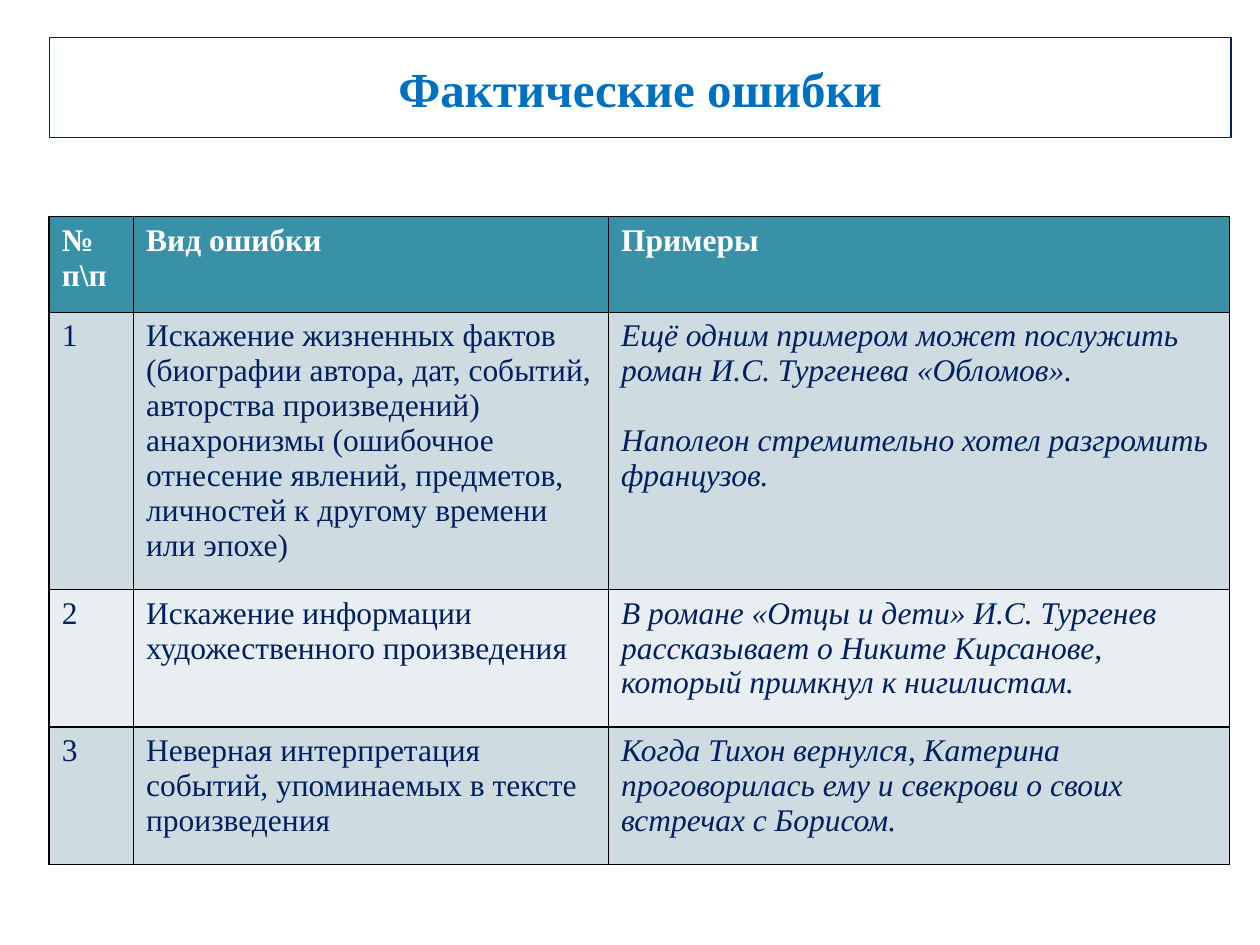
from dataclasses import dataclass
from lxml.etree import SubElement
from pptx import Presentation
from pptx.dml.color import RGBColor as RGB
from pptx.enum.text import MSO_ANCHOR as Anchor, PP_ALIGN as Align
from pptx.oxml.ns import qn
from pptx.util import Inches, Pt

TITLE = "Фактические ошибки"
HEAD = [["№", "п\\п"], ["Вид ошибки"], ["Примеры"]]
ROWS = [
    [["1"],
     ["Искажение жизненных фактов (биографии автора, дат, событий, авторства "
      "произведений) анахронизмы (ошибочное отнесение явлений, предметов, "
      "личностей к другому времени или эпохе)"],
     ["Ещё одним примером может послужить роман И.С. Тургенева «Обломов».",
      "Наполеон стремительно хотел разгромить французов."]],
    [["2"],
     ["Искажение информации художественного произведения"],
     ["В романе «Отцы и дети» И.С. Тургенев рассказывает о Никите Кирсанове, "
      "который примкнул к нигилистам."]],
    [["3"],
     ["Неверная интерпретация событий, упоминаемых в тексте произведения"],
     ["Когда Тихон вернулся, Катерина проговорилась ему и свекрови о своих "
      "встречах с Борисом."]],
]
LEFT, WIDTH = 0.39, 9.38
TITLE_TOP, TITLE_HIGH = 0.3, 0.79
TABLE_TOP = 1.72
COLS = [0.67, 3.77, 4.93]
HIGHS = [0.76, 2.13, 1.09, 1.09]


@dataclass(frozen=True)
class Theme:
    font: str = "Times New Roman"
    title: str = "0070C0"
    ink: str = "002060"
    light: str = "FFFFFF"
    head: str = "3891A7"
    bands: tuple = ("CEDCE1", "E8EEF1")
    grid: str = "000000"
    big: int = 28
    body: int = 18
    gap: int = 20


T = Theme()


def write(frame, lines, size=T.body, color=T.ink, bold=False, italic=False,
          align=Align.LEFT, gap=0):
    for i, line in enumerate(lines):
        para = frame.paragraphs[0] if i == 0 else frame.add_paragraph()
        para.alignment = align
        if i and gap:
            para.space_before = Pt(gap)
        run = para.add_run()
        run.text = line
        font = run.font
        font.name, font.size = T.font, Pt(size)
        font.bold, font.italic = bold, italic
        font.color.rgb = RGB.from_string(color)


def paint(cell, color):
    """Draw the four borders, then fill the cell."""
    props = cell._tc.get_or_add_tcPr()
    for side in ("lnL", "lnR", "lnT", "lnB"):
        line = SubElement(props, qn(f"a:{side}"), w=str(Pt(1)))
        fill = SubElement(line, qn("a:solidFill"))
        SubElement(fill, qn("a:srgbClr"), val=T.grid)
    cell.fill.solid()
    cell.fill.fore_color.rgb = RGB.from_string(color)


def add_title(slide):
    box = slide.shapes.add_textbox(Inches(LEFT), Inches(TITLE_TOP),
                                   Inches(WIDTH), Inches(TITLE_HIGH))
    box.line.color.rgb = RGB.from_string(T.ink)
    box.line.width = Pt(0.75)
    frame = box.text_frame
    frame.word_wrap = True
    frame.vertical_anchor = Anchor.MIDDLE
    write(frame, [TITLE], size=T.big, color=T.title, bold=True,
          align=Align.CENTER)


def add_grid(slide):
    table = slide.shapes.add_table(
        len(HIGHS), len(COLS), Inches(LEFT), Inches(TABLE_TOP),
        Inches(WIDTH), Inches(sum(HIGHS))).table
    for col, wide in zip(table.columns, COLS):
        col.width = Inches(wide)
    for row, high in zip(table.rows, HIGHS):
        row.height = Inches(high)
    for r, row in enumerate([HEAD] + ROWS):
        for c, lines in enumerate(row):
            cell = table.cell(r, c)
            if r == 0:
                paint(cell, T.head)
                write(cell.text_frame, lines, color=T.light, bold=True)
            else:
                paint(cell, T.bands[(r - 1) % 2])
                write(cell.text_frame, lines, italic=c == 2, gap=T.gap)


def main():
    deck = Presentation()
    deck.slide_width, deck.slide_height = Inches(10), Inches(7.5)
    slide = deck.slides.add_slide(deck.slide_layouts[6])
    add_title(slide)
    add_grid(slide)
    deck.save("out.pptx")


if __name__ == "__main__":
    main()
